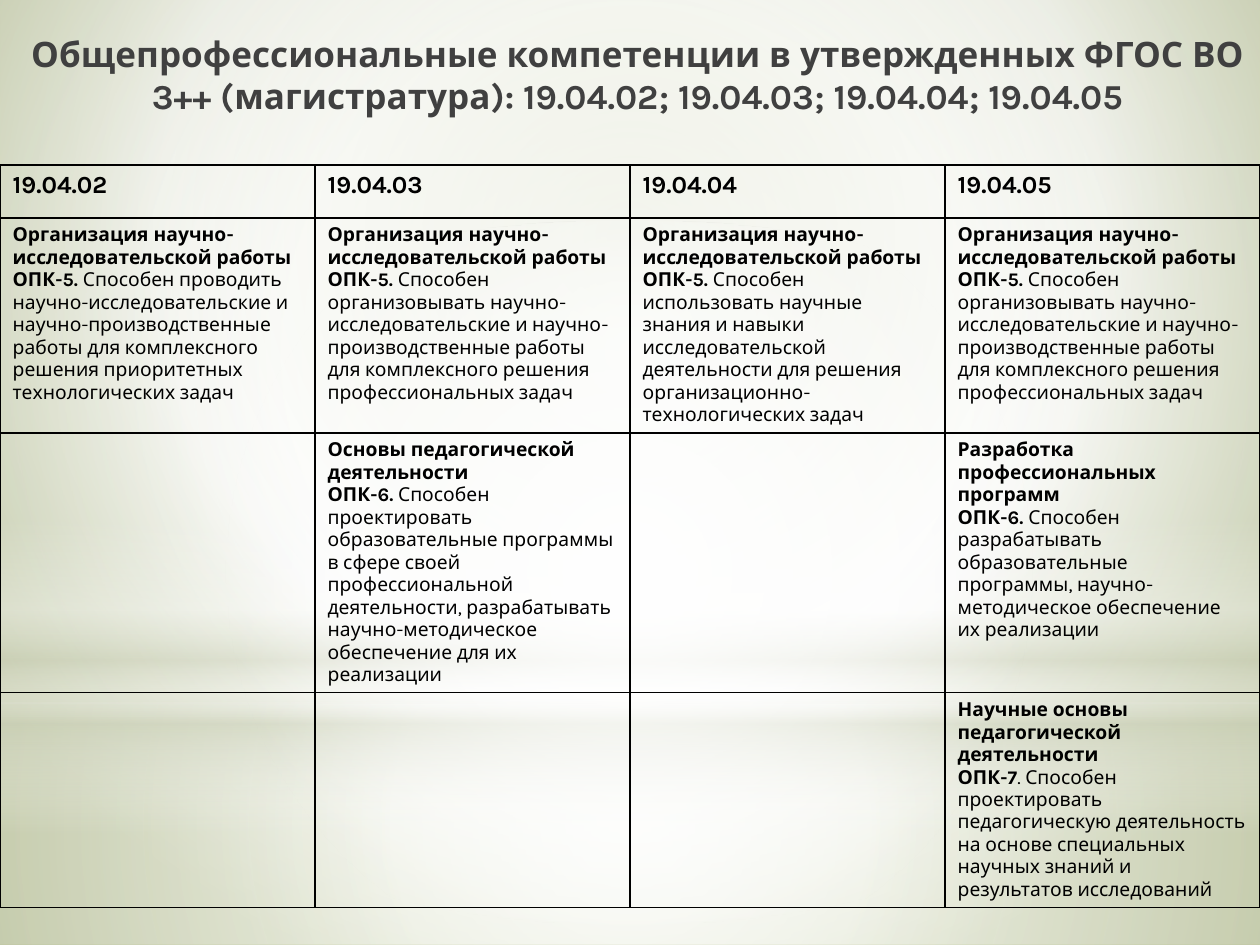
import pptx
import pptx.dml.color
import pptx.enum.shapes
import pptx.enum.text
import pptx.oxml
import pptx.oxml.ns
import pptx.util

Inches = pptx.util.Inches
Pt = pptx.util.Pt
Shape = pptx.enum.shapes.MSO_SHAPE
Align = pptx.enum.text.PP_ALIGN
NS = pptx.oxml.ns.nsdecls("a")

TITLE = ("Общепрофессиональные компетенции в утвержденных ФГОС ВО 3++ "
         "(магистратура): 19.04.02; 19.04.03; 19.04.04; 19.04.05")
CODES = ["19.04.02", "19.04.03", "19.04.04", "19.04.05"]
STUDY = "Организация научно-исследовательской работы"
ORDER = ("Способен организовывать научно-исследовательские и "
         "научно-производственные работы для комплексного решения "
         "профессиональных задач")
SKILLS = [
    [
        (STUDY, "ОПК-5. ",
         "Способен проводить научно-исследовательские и "
         "научно-производственные работы для комплексного решения "
         "приоритетных технологических задач"),
        (STUDY, "ОПК-5. ", ORDER),
        (STUDY, "ОПК-5. ",
         "Способен использовать научные знания и навыки исследовательской "
         "деятельности для решения организационно-технологических задач"),
        (STUDY, "ОПК-5. ", ORDER),
    ],
    [
        None,
        ("Основы педагогической деятельности", "ОПК-6.",
         " Способен проектировать образовательные программы в сфере своей "
         "профессиональной деятельности, разрабатывать научно-методическое "
         "обеспечение для их реализации"),
        None,
        ("Разработка профессиональных программ", "ОПК-6. ",
         "Способен разрабатывать образовательные программы, "
         "научно-методическое обеспечение их реализации"),
    ],
    [
        None, None, None,
        ("Научные основы педагогической деятельности", "ОПК-7",
         ". Способен проектировать педагогическую деятельность на основе "
         "специальных научных знаний и результатов исследований"),
    ],
]


def color(code):
    return pptx.dml.color.RGBColor.from_string(code)


def write(para, text, size=11, bold=False, tint="000000", align=Align.LEFT):
    para.alignment = align
    run = para.add_run()
    run.text = text
    font = run.font
    font.name = "Karla"
    font.size = Pt(size)
    font.bold = bold
    font.color.rgb = color(tint)


def blend(fill, owner, stops, focus=None):
    fill.gradient()
    old = owner.xpath(".//a:gradFill")[0]
    marks = "".join(
        f'<a:gs pos="{pos * 1000}"><a:srgbClr val="{tint}">'
        f'<a:alpha val="{alpha * 1000}"/></a:srgbClr></a:gs>'
        for pos, tint, alpha in stops)
    if focus:
        sides = " ".join(f'{side}="{part * 1000}"'
                         for side, part in zip("ltrb", focus))
        shade = f'<a:path path="circle"><a:fillToRect {sides}/></a:path>'
    else:
        shade = '<a:lin ang="5400000" scaled="0"/>'
    new = pptx.oxml.parse_xml(
        f'<a:gradFill {NS} rotWithShape="1"><a:gsLst>{marks}</a:gsLst>'
        f'{shade}</a:gradFill>')
    old.getparent().replace(old, new)


def glow(slide, kind, box, stops, focus=None):
    shape = slide.shapes.add_shape(kind, *box)
    shape.shadow.inherit = False
    shape.line.fill.background()
    blend(shape.fill, shape.element, stops, focus)


def scene(slide, box):
    left, top, width, height = box
    split = Inches(5.58)
    mid = (50, 50, 50, 50)
    blend(slide.background.fill, slide.element,
          [(0, "C8CFAC", 100), (60, "FFFFFF", 100), (100, "AFBB84", 100)],
          (20, 10, 20, 60))
    glow(slide, Shape.RECTANGLE, (left, top + split, width, height - split),
         [(0, "FFFFFF", 91), (37, "FFFFFF", 76), (100, "CCD1B9", 79)], mid)
    glow(slide, Shape.RECTANGLE, (left, top, width, split),
         [(0, "FFFFFF", 89), (48, "FFFFFF", 62), (100, "CCD1B9", 79)], mid)
    glow(slide, Shape.RECTANGLE,
         (left, top + Inches(4.12), width, Inches(2.5)),
         [(0, "FFFFFF", 0), (29, "FFFFFF", 30), (45, "CCD1B9", 40),
          (55, "FFFFFF", 26), (65, "CCD1B9", 60), (100, "FFFFFF", 0)])
    glow(slide, Shape.OVAL, (left, top + Inches(1.75), width, split),
         [(0, "FFFFFF", 100), (56, "FFFFFF", 0)], mid)


def head(slide, box):
    title = slide.shapes.title
    title.left, title.top, title.width, title.height = box
    slide.shapes.element.append(title.element)
    frame = title.text_frame
    frame.word_wrap = True
    frame.auto_size = pptx.enum.text.MSO_AUTO_SIZE.NONE
    frame.vertical_anchor = pptx.enum.text.MSO_ANCHOR.TOP
    write(frame.paragraphs[0], TITLE, size=20, bold=True, tint="404040",
          align=Align.CENTER)


def edge(cell):
    props = cell._tc.get_or_add_tcPr()
    for side in "LRTB":
        props.append(pptx.oxml.parse_xml(
            f'<a:ln{side} {NS} w="{Pt(1)}"><a:solidFill>'
            f'<a:srgbClr val="000000"/></a:solidFill></a:ln{side}>'))
    cell.fill.background()


def grid(slide, box):
    rows = [0.42, 1.6, 1.99, 1.42]
    table = slide.shapes.add_table(len(rows), len(CODES), *box).table
    table.first_row = table.horz_banding = False
    for row, tall in zip(table.rows, rows):
        row.height = Inches(tall)
    for cell in table.iter_cells():
        edge(cell)
    for col, code in enumerate(CODES):
        para = table.cell(0, col).text_frame.paragraphs[0]
        write(para, code, size=14, bold=True)
    for row, line in enumerate(SKILLS, 1):
        for col, skill in enumerate(line):
            frame = table.cell(row, col).text_frame
            if skill is None:
                frame.paragraphs[0].font.size = Pt(11)
                continue
            group, code, text = skill
            write(frame.paragraphs[0], group, bold=True)
            para = frame.add_paragraph()
            write(para, code, bold=True)
            write(para, text)


def main():
    deck = pptx.Presentation()
    deck.slide_width = Inches(10)
    deck.slide_height = Inches(7.5)
    slide = deck.slides.add_slide(deck.slide_layouts[5])
    scene(slide, (0, 0, deck.slide_width, deck.slide_height))
    head(slide, (Inches(0.12), Inches(0.21), Inches(9.88), Inches(1.25)))
    grid(slide, (0, Inches(1.31), deck.slide_width, Inches(5.43)))
    deck.save("out.pptx")


if __name__ == "__main__":
    main()
